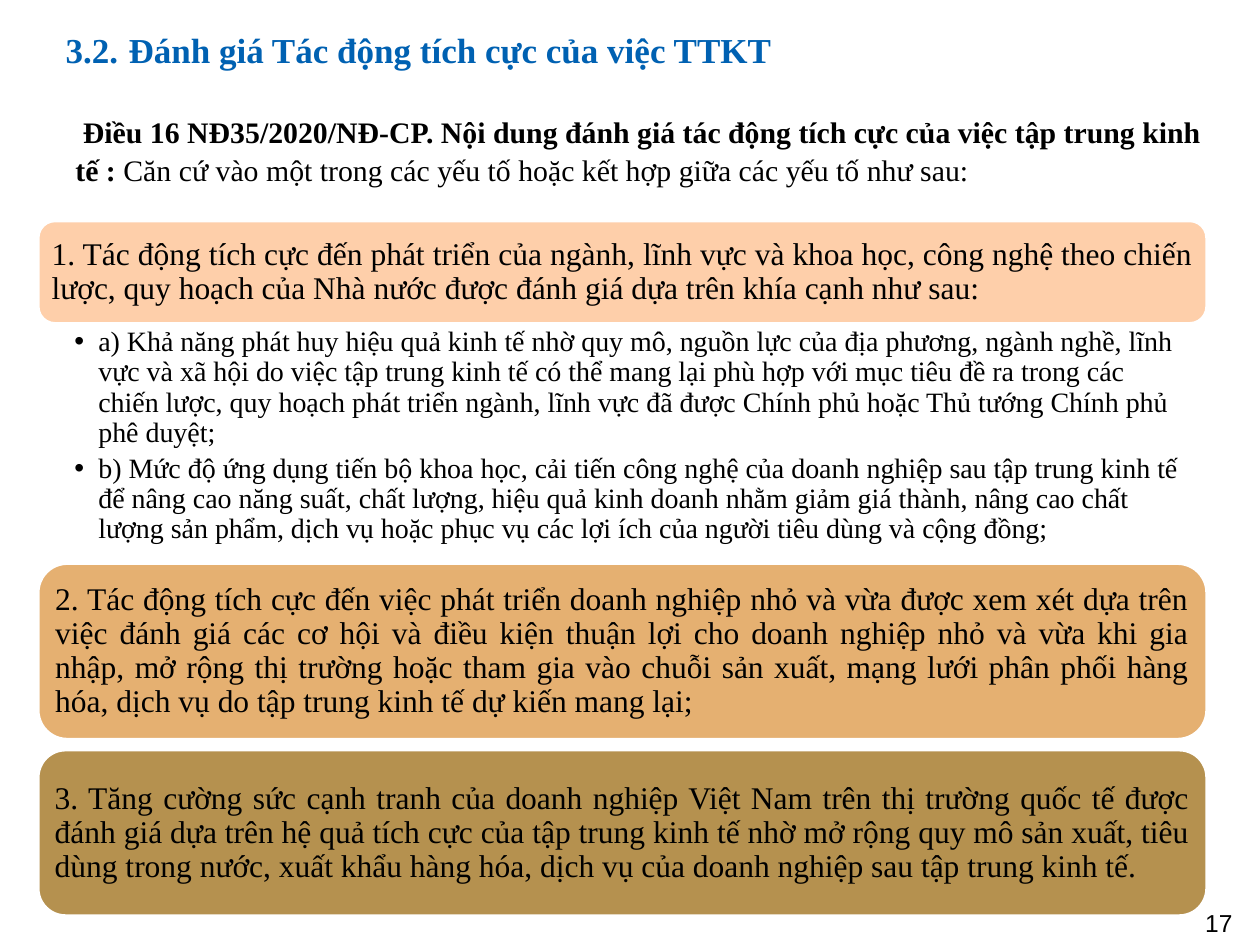
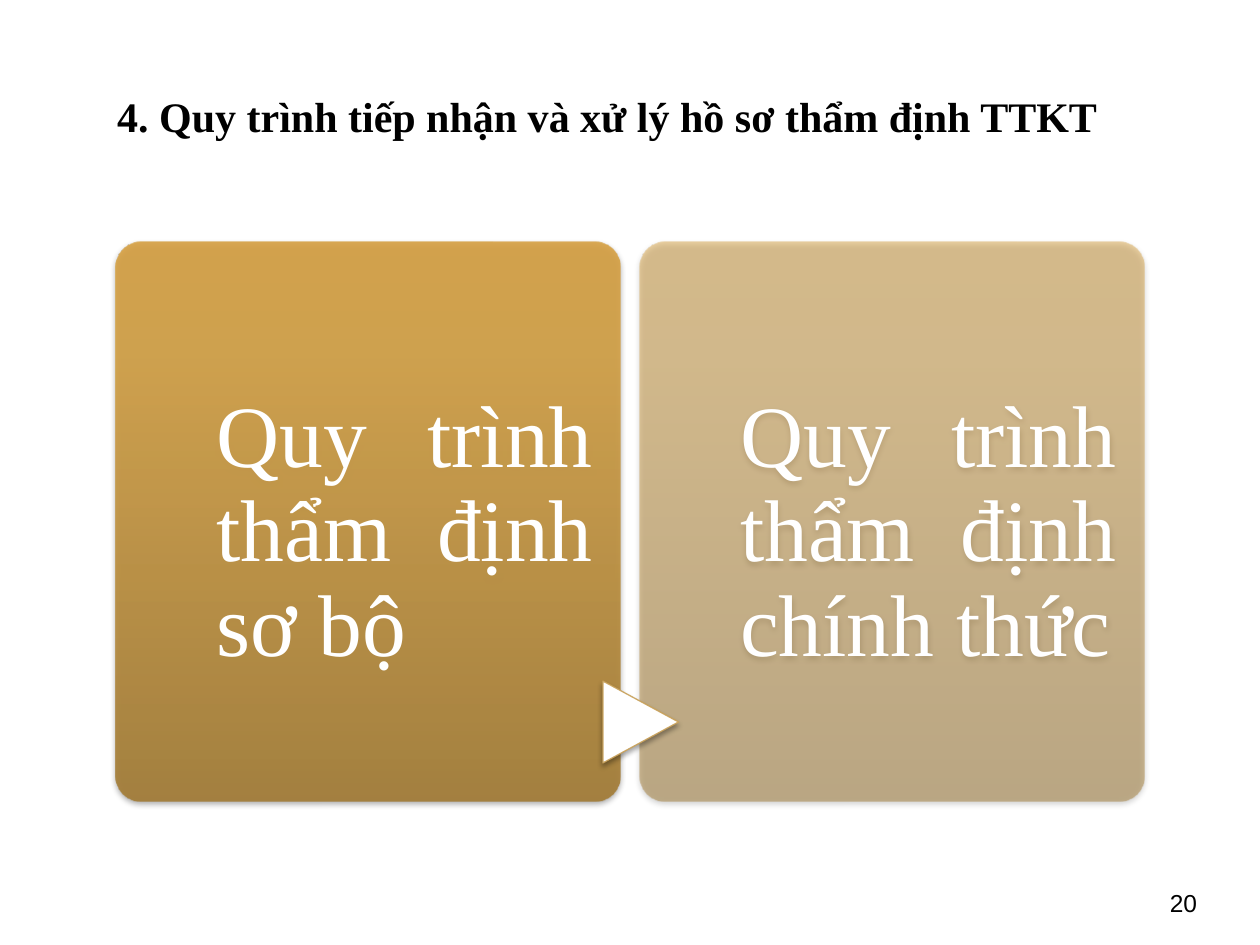
from dataclasses import dataclass

from lxml.etree import SubElement
from pptx import Presentation
from pptx.dml.color import RGBColor
from pptx.enum.shapes import MSO_SHAPE as Shape
from pptx.enum.text import MSO_ANCHOR as Anchor, MSO_AUTO_SIZE as AutoSize, PP_ALIGN as Align
from pptx.oxml.ns import qn
from pptx.util import Inches, Pt

CELL = 0.1  # inches; the slide is a grid of 100 columns by 75 rows
COLUMNS, ROWS = 100, 75

BLACK = RGBColor(0x00, 0x00, 0x00)
WHITE = RGBColor(0xFF, 0xFF, 0xFF)
TITLE_BLUE = RGBColor(0x00, 0x61, 0xB2)
PEACH = RGBColor(0xFE, 0xCF, 0xAA)
APRICOT = RGBColor(0xE5, 0xB0, 0x71)
BRONZE = RGBColor(0xB5, 0x91, 0x4F)
ARROW_EDGE = RGBColor(0xC8, 0xA0, 0x58)
GOLD_STOPS = (
    (0, RGBColor(0xA2, 0x7B, 0x35)),
    (80, RGBColor(0xD2, 0xA0, 0x45)),
    (100, RGBColor(0xD6, 0xA1, 0x43)),
)
SERIF, SANS = "Times New Roman", "Arial"
TEXT_BOX_MARGINS = (0.1, 0.05, 0.1, 0.05)


@dataclass
class Box:
    """A rectangle measured in grid columns and rows."""
    left: float
    top: float
    width: float
    height: float

    def inner(self, left, top, width, height):
        return Box(self.left + left, self.top + top, width, height)

    def lengths(self):
        return [Inches(cells * CELL) for cells in (self.left, self.top, self.width, self.height)]


SLIDE = Box(0, 0, COLUMNS, ROWS)


def place(placeholder, box):
    placeholder.left, placeholder.top, placeholder.width, placeholder.height = box.lengths()


def write(frame, *paragraphs, size, color=BLACK, font=SERIF, bold=False, align=Align.LEFT,
          anchor=Anchor.TOP, margins=TEXT_BOX_MARGINS, spacing=1.0, after=0,
          indent=(0, 0), tab=None):
    """Fill a frame; a paragraph is a string or a list of (text, bold) runs."""
    frame.word_wrap = True
    frame.auto_size = AutoSize.NONE
    frame.vertical_anchor = anchor
    (frame.margin_left, frame.margin_top,
     frame.margin_right, frame.margin_bottom) = map(Inches, margins)
    for number, content in enumerate(paragraphs):
        paragraph = frame.add_paragraph() if number else frame.paragraphs[0]
        paragraph.alignment = align
        paragraph.line_spacing = spacing
        paragraph.space_before = Pt(0)
        paragraph.space_after = Pt(after)
        properties = paragraph._p.get_or_add_pPr()
        for name, length in zip(("marL", "indent"), indent):
            properties.set(name, str(Inches(length)))
        if tab:
            stops = SubElement(properties, qn("a:tabLst"))
            SubElement(stops, qn("a:tab"), pos=str(Inches(tab)), algn="l")
        for text, is_bold in [(content, bold)] if isinstance(content, str) else content:
            run = paragraph.add_run()
            run.text = text
            run.font.name, run.font.size, run.font.bold = font, Pt(size), is_bold
            run.font.color.rgb = color


def add_title(slide, box, text, **style):
    place(slide.shapes.title, box)
    write(slide.shapes.title.text_frame, text, bold=True, **style)


def add_text(slide, box, *paragraphs, **style):
    write(slide.shapes.add_textbox(*box.lengths()).text_frame, *paragraphs, **style)


def add_page_number(slide, box, number):
    add_text(slide, box, str(number), size=14, font=SANS, align=Align.RIGHT)


def add_plain_shape(slide, kind, box):
    shape = slide.shapes.add_shape(kind, *box.lengths())
    shape.shadow.inherit = False
    return shape


def add_alpha(color_element, percent):
    SubElement(color_element, qn("a:alpha"), val=str(percent * 1000))


def add_color(parent, color, alpha):
    add_alpha(SubElement(parent, qn("a:srgbClr"), val=str(color)), alpha)


def cast_shadow(shape):
    effects = shape._element.spPr.find(qn("a:effectLst"))
    shadow = SubElement(effects, qn("a:outerShdw"), blurRad=str(Pt(3.1)), dist=str(Pt(1.8)),
                        dir="5400000", rotWithShape="0")
    add_color(shadow, BLACK, 35)


def fill_gold(shape, alpha):
    shape.fill.gradient()
    shape.fill.gradient_angle = 90
    stops = shape._element.spPr.find(".//" + qn("a:gsLst"))
    stops.clear()
    for position, color in GOLD_STOPS:
        add_color(SubElement(stops, qn("a:gs"), pos=str(position * 1000)), color, alpha)


def add_factor_band(slide, box, color, text):
    band = add_plain_shape(slide, Shape.ROUNDED_RECTANGLE, box)
    band.fill.solid()
    band.fill.fore_color.rgb = color
    band.line.color.rgb = WHITE
    band.line.width = Pt(2)
    write(band.text_frame, text, size=18, align=Align.JUSTIFY, anchor=Anchor.MIDDLE,
          margins=(0.07,) * 4, spacing=0.9)


def add_factors(slide, box, factors, details):
    for (top, height), color, text in factors:
        add_factor_band(slide, box.inner(0, top, box.width, height), color, text)
    body = slide.placeholders[1]
    place(body, box.inner(0, 8.3, box.width, 17.2))
    write(body.text_frame, *details, size=16, margins=(0.29, 0.02, 0.12, 0.02),
          spacing=0.9, after=3.2, indent=(0.19, -0.19))


def add_stage_panel(slide, box, text, alpha):
    panel = add_plain_shape(slide, Shape.ROUNDED_RECTANGLE, box)
    panel.adjustments[0] = 0.05
    fill_gold(panel, alpha)
    panel.line.fill.background()
    cast_shadow(panel)
    write(panel.text_frame, text, size=50, color=WHITE, align=Align.JUSTIFY,
          anchor=Anchor.MIDDLE, margins=(0.74, 0.19, 0.16, 0), spacing=0.9)


def add_stage_arrow(slide, box):
    arrow = add_plain_shape(slide, Shape.FLOWCHART_EXTRACT, box)
    arrow.rotation = 90
    arrow.fill.solid()
    arrow.fill.fore_color.rgb = WHITE
    arrow.line.color.rgb = ARROW_EDGE
    arrow.line.width = Pt(0.75)
    add_alpha(arrow._element.spPr.find(qn("a:ln")).find(".//" + qn("a:srgbClr")), 90)
    cast_shadow(arrow)


def add_stages(slide, box, stages, gap=1.5):
    width = (box.width - gap) / len(stages)
    for number, (text, alpha) in enumerate(stages):
        panel = box.inner(number * (width + gap), 0, width, box.height)
        add_stage_panel(slide, panel, text, alpha)
    add_stage_arrow(slide, box.inner(38.4, 35.1, 6.5, 6))


def build_impact_slide(deck):
    slide = deck.slides.add_slide(deck.slide_layouts[1])
    add_title(slide, SLIDE.inner(4.2, 0, 93.3, 8.3),
              "3.2.\tĐánh giá Tác động tích cực của việc TTKT",
              size=20, color=TITLE_BLUE, anchor=Anchor.MIDDLE, spacing=0.9, tab=0.56)
    add_text(slide, SLIDE.inner(5, 8.3, 92.5, 6.9), [
        ("Điều 16 NĐ35/2020/NĐ-CP. Nội dung đánh giá tác động tích cực của việc "
         "tập trung kinh tế : ", True),
        ("Căn cứ vào một trong các yếu tố hoặc kết hợp giữa các yếu tố như sau:", False),
    ], size=17, spacing=1.07, indent=(0, 0.06))
    factors = [
        ((0, 8.2), PEACH,
         "1. Tác động tích cực đến phát triển của ngành, lĩnh vực và khoa học, công nghệ theo "
         "chiến lược, quy hoạch của Nhà nước được đánh giá dựa trên khía cạnh như sau:"),
        ((27.2, 14), APRICOT,
         "2. Tác động tích cực đến việc phát triển doanh nghiệp nhỏ và vừa được xem xét dựa "
         "trên việc đánh giá các cơ hội và điều kiện thuận lợi cho doanh nghiệp nhỏ và vừa khi "
         "gia nhập, mở rộng thị trường hoặc tham gia vào chuỗi sản xuất, mạng lưới phân phối "
         "hàng hóa, dịch vụ do tập trung kinh tế dự kiến mang lại;"),
        ((42, 13.2), BRONZE,
         "3. Tăng cường sức cạnh tranh của doanh nghiệp Việt Nam trên thị trường quốc tế được "
         "đánh giá dựa trên hệ quả tích cực của tập trung kinh tế nhờ mở rộng quy mô sản xuất, "
         "tiêu dùng trong nước, xuất khẩu hàng hóa, dịch vụ của doanh nghiệp sau tập trung "
         "kinh tế."),
    ]
    details = [
        "a) Khả năng phát huy hiệu quả kinh tế nhờ quy mô, nguồn lực của địa phương, ngành "
        "nghề, lĩnh vực và xã hội do việc tập trung kinh tế có thể mang lại phù hợp với mục "
        "tiêu đề ra trong các chiến lược, quy hoạch phát triển ngành, lĩnh vực đã được Chính "
        "phủ hoặc Thủ tướng Chính phủ phê duyệt;",
        "b) Mức độ ứng dụng tiến bộ khoa học, cải tiến công nghệ của doanh nghiệp sau tập "
        "trung kinh tế để nâng cao năng suất, chất lượng, hiệu quả kinh doanh nhằm giảm giá "
        "thành, nâng cao chất lượng sản phẩm, dịch vụ hoặc phục vụ các lợi ích của người tiêu "
        "dùng và cộng đồng;",
    ]
    add_factors(slide, SLIDE.inner(3, 17.5, 92.8, 55.2), factors, details)
    add_page_number(slide, SLIDE.inner(93.3, 71.6, 5.5, 3.3), 17)


def build_process_slide(deck):
    slide = deck.slides.add_slide(deck.slide_layouts[5])
    add_title(slide, SLIDE.inner(8.3, 6.7, 80.8, 5),
              "4. Quy trình tiếp nhận và xử lý hồ sơ thẩm định TTKT", size=24)
    add_stages(slide, SLIDE.inner(9.2, 19.2, 81.6, 44.4), [
        ("Quy trình thẩm định sơ bộ", 90),
        ("Quy trình thẩm định chính thức", 50),
    ])
    add_page_number(slide, SLIDE.inner(90.5, 70, 5.5, 3.3), 20)


def main():
    deck = Presentation()
    deck.slide_width, deck.slide_height = Inches(COLUMNS * CELL), Inches(ROWS * CELL)
    build_impact_slide(deck)
    build_process_slide(deck)
    deck.save("out.pptx")


if __name__ == "__main__":
    main()
